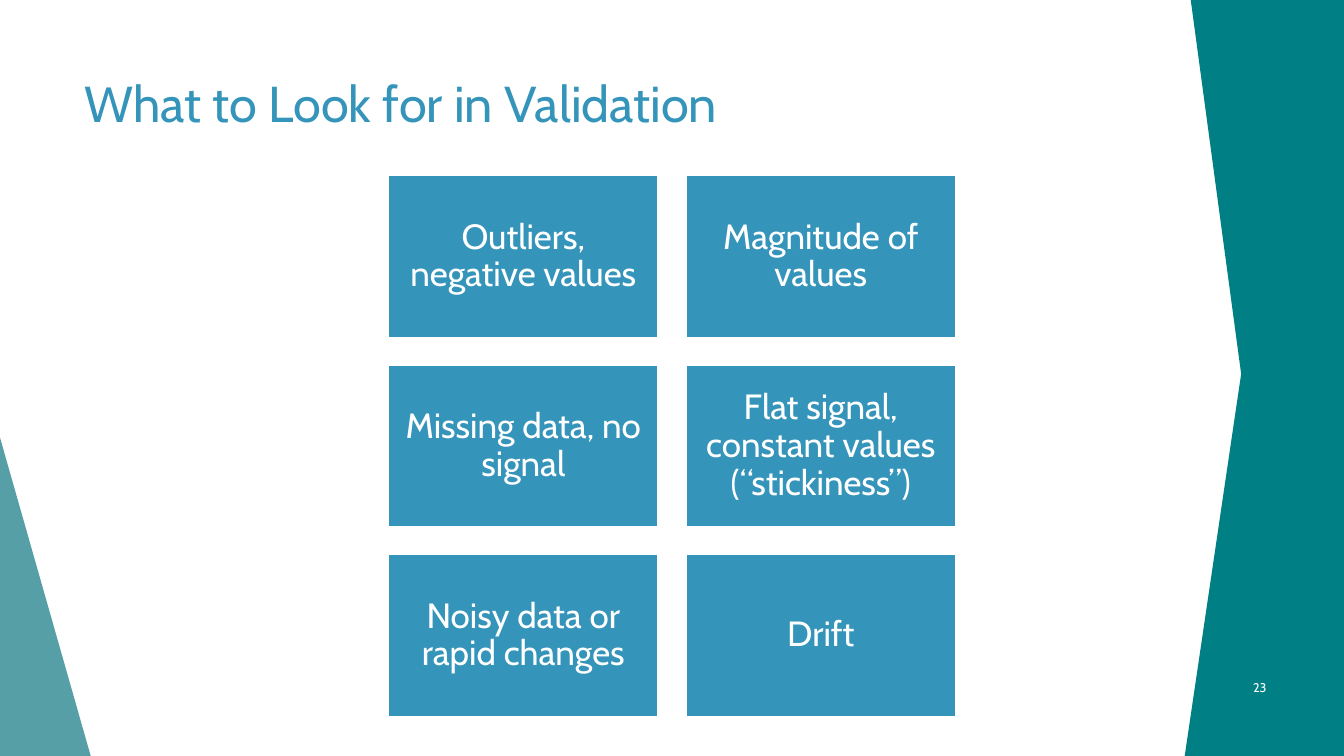
from dataclasses import dataclass

import pptx
import pptx.dml.color
import pptx.enum.shapes
import pptx.enum.text
import pptx.util
from lxml import etree

Inches = pptx.util.Inches
Pt = pptx.util.Pt
RGB = pptx.dml.color.RGBColor.from_string
ALIGN = pptx.enum.text.PP_ALIGN
ANCHOR = pptx.enum.text.MSO_ANCHOR
SHAPE = pptx.enum.shapes.MSO_SHAPE


@dataclass(frozen=True)
class Theme:
    font: str = "Cabin"
    blue: str = "3494BA"
    teal: str = "008085"
    pale_teal: str = "3A8F98"
    white: str = "FFFFFF"
    title_size: float = 36
    card_size: float = 25
    number_size: float = 9


theme = Theme()


def write(shape, text, size, color, align, anchor):
    frame = shape.text_frame
    frame.word_wrap = True
    frame.vertical_anchor = anchor
    paragraph = frame.paragraphs[0]
    paragraph.text = text
    paragraph.alignment = align
    font = paragraph.runs[0].font
    font.name, font.size = theme.font, Pt(size)
    font.color.rgb = RGB(color)
    return frame


def paint(shape, color):
    """Give a shape a flat fill with neither outline nor shadow."""
    shape.shadow.inherit = False
    shape.fill.solid()
    shape.fill.fore_color.rgb = RGB(color)
    shape.line.fill.background()


deck = pptx.Presentation()
deck.slide_width, deck.slide_height = Inches(13.33), Inches(7.5)
slide = deck.slides.add_slide(deck.slide_layouts[6])
shapes = slide.shapes

# Side decorations
left_wedge = shapes.add_shape(
    SHAPE.RIGHT_TRIANGLE, Inches(0), Inches(4.34), Inches(0.9), Inches(3.16))
paint(left_wedge, theme.pale_teal)
wedge_color = left_wedge.fill._xPr.find(".//" + pptx.oxml.ns.qn("a:srgbClr"))
etree.SubElement(wedge_color, pptx.oxml.ns.qn("a:alpha"), val="85000")

band_points = [(13.33, 0), (13.33, 7.5), (11.75, 7.5), (12.31, 3.71), (11.81, 0)]
corners = [(Inches(x), Inches(y)) for x, y in band_points]
band_outline = shapes.build_freeform(*corners[0])
band_outline.add_line_segments(corners[1:], close=True)
paint(band_outline.convert_to_shape(), theme.teal)

# Title and page number
title = shapes.add_textbox(Inches(0.74), Inches(0.67), Inches(11.92), Inches(1))
write(title, "What to Look for in Validation", theme.title_size, theme.blue,
      ALIGN.LEFT, ANCHOR.TOP)
page_number = shapes.add_textbox(Inches(11.91), Inches(6.62), Inches(0.75), Inches(0.4))
write(page_number, "23", theme.number_size, theme.white, ALIGN.RIGHT, ANCHOR.MIDDLE)

# Validation checks, two per row
checks = [
    "Outliers, negative values",
    "Magnitude of values",
    "Missing data, no signal",
    "Flat signal, constant values (“stickiness”)",
    "Noisy data or rapid changes",
    "Drift",
]
COLUMNS = 2
GRID_LEFT, GRID_TOP = 3.85, 1.74
CARD_WIDTH, CARD_HEIGHT = 2.68, 1.61
GAP = 0.27
card_margins = {f"margin_{side}": Inches(0.1) for side in ("left", "top", "right", "bottom")}

for index, check in enumerate(checks):
    row, column = divmod(index, COLUMNS)
    card = shapes.add_shape(
        SHAPE.RECTANGLE,
        Inches(GRID_LEFT + column * (CARD_WIDTH + GAP)),
        Inches(GRID_TOP + row * (CARD_HEIGHT + GAP)),
        Inches(CARD_WIDTH), Inches(CARD_HEIGHT))
    paint(card, theme.blue)
    card.line.color.rgb = RGB(theme.white)
    card.line.width = Pt(1.5)
    card_text = write(card, check, theme.card_size, theme.white, ALIGN.CENTER, ANCHOR.MIDDLE)
    card_text.paragraphs[0].line_spacing = 0.9
    for margin, width in card_margins.items():
        setattr(card_text, margin, width)

deck.save("out.pptx")
